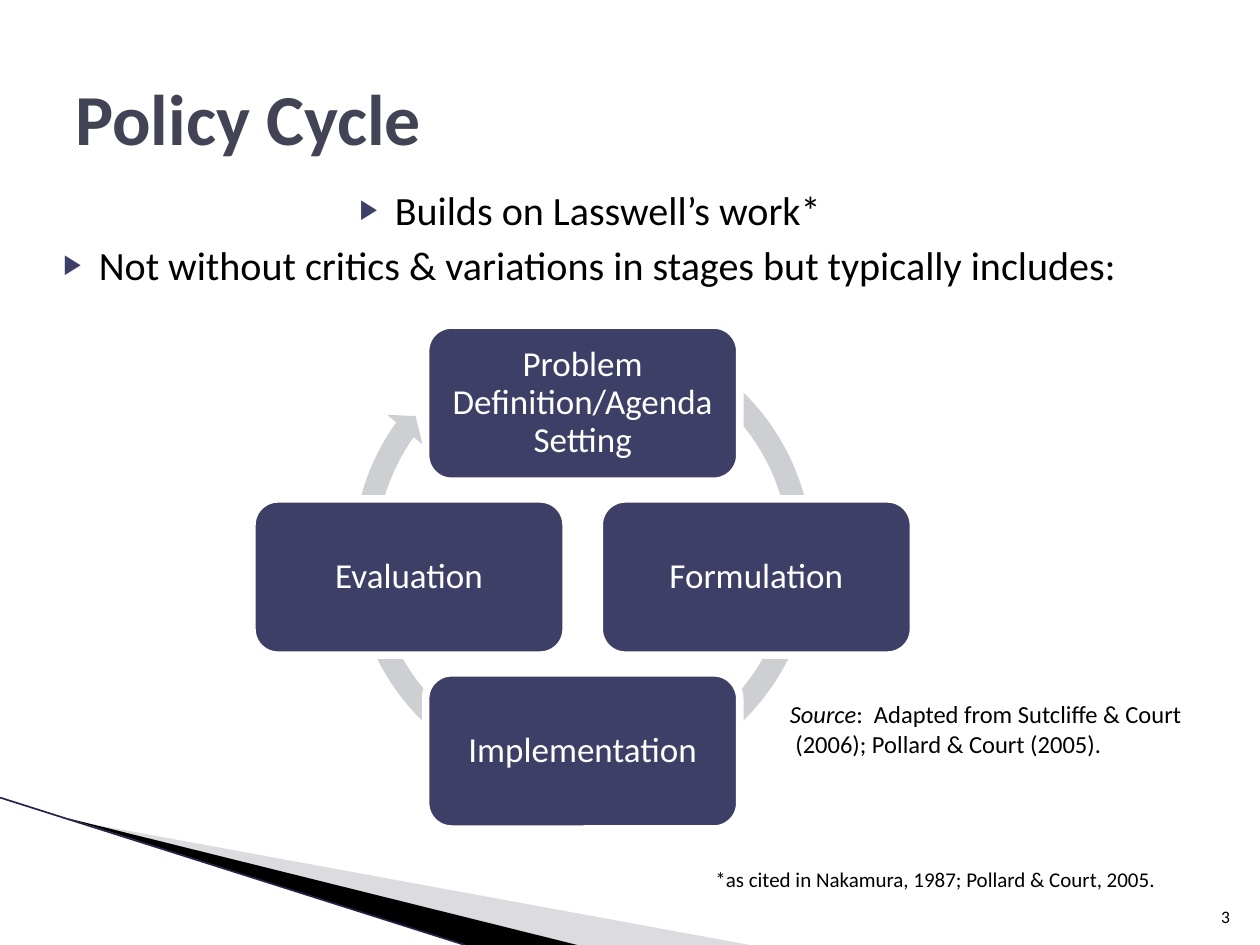
from lxml.etree import SubElement
from pptx import Presentation
from pptx.dml.color import RGBColor
from pptx.enum.shapes import MSO_CONNECTOR, MSO_SHAPE
from pptx.enum.text import MSO_ANCHOR, PP_ALIGN
from pptx.oxml.ns import qn
from pptx.util import Inches, Pt

WIDE, HIGH = 10, 7.5
FONT = "Calibri"
INK = {"navy": "3E3F67", "title": "424456", "ring": "CECFD3", "mist": "A6A6B2",
       "edge": "25254A", "black": "000000", "white": "FFFFFF"}
STAGES = [("Problem Definition/Agenda Setting", 1, 0), ("Formulation", 2, 1),
          ("Implementation", 1, 2), ("Evaluation", 0, 1)]


def share(left, top, wide, high):
    """Turn inches into shares of the slide's size."""
    return left / WIDE, top / HIGH, wide / WIDE, high / HIGH


def place(box):
    """Turn shares of the slide into lengths."""
    left, top, wide, high = box
    return (Inches(left * WIDE), Inches(top * HIGH),
            Inches(wide * WIDE), Inches(high * HIGH))


def tint(name):
    return RGBColor.from_string(INK[name])


def style(font, size, color="black", bold=False, italic=False):
    font.name, font.size = FONT, Pt(size)
    font.bold, font.italic = bold, italic
    font.color.rgb = tint(color)


def paint(shape, color):
    shape.shadow.inherit = False
    shape.fill.solid()
    shape.fill.fore_color.rgb = tint(color)
    shape.line.fill.background()


def add_text(slide, box, text, size, color="black", bold=False,
             align=PP_ALIGN.LEFT, anchor=MSO_ANCHOR.TOP):
    frame = slide.shapes.add_textbox(*place(box)).text_frame
    frame.word_wrap = True
    frame.vertical_anchor = anchor
    frame.text = text
    for para in frame.paragraphs:
        para.alignment = align
        for run in para.runs:
            style(run.font, size, color, bold)
    return frame


def add_bullet(para):
    props = para._p.get_or_add_pPr()
    props.set("marL", str(Inches(0.4)))
    props.set("indent", str(-Inches(0.28)))
    hue = SubElement(props, qn("a:buClr"))
    SubElement(hue, qn("a:srgbClr"), val=INK["navy"])
    SubElement(props, qn("a:buSzPct"), val="68000")
    SubElement(props, qn("a:buFont"), typeface="Arial")
    SubElement(props, qn("a:buChar"), char="▶")


def add_wedge(slide, points, color, alpha=None):
    start, *rest = [(Inches(x), Inches(y)) for x, y in points]
    build = slide.shapes.build_freeform(*start, scale=1.0)
    build.add_line_segments(rest, close=True)
    shape = build.convert_to_shape()
    paint(shape, color)
    if alpha:
        hue = shape._element.spPr.find(qn("a:solidFill"))[0]
        SubElement(hue, qn("a:alpha"), val=str(alpha * 1000))


def add_sweep(slide, box):
    """Draw the corner wedges and the thin line above them."""
    left, top, wide, high = box

    def spot(col, row):
        return (left + col * wide) * WIDE, (top + row * high) * HIGH

    add_wedge(slide, [spot(0.09, 0.15), spot(1, 1), spot(0.77, 1)], "mist", 40)
    add_wedge(slide, [spot(0.09, 0.14), spot(0.77, 1), spot(0.62, 1)], "black")
    ends = [Inches(n) for n in spot(0, 0) + spot(0.62, 1)]
    line = slide.shapes.add_connector(MSO_CONNECTOR.STRAIGHT, *ends)
    line.line.color.rgb = tint("edge")
    line.line.width = Pt(0.95)
    SubElement(line._element.spPr, qn("a:effectLst"))


def add_points(slide, box, lines):
    frame = add_text(slide, box, "\n".join(lines), 22.9, align=PP_ALIGN.CENTER)
    for para in frame.paragraphs:
        add_bullet(para)
    for para in frame.paragraphs[1:]:
        para.space_before = Pt(4)


def add_stage(slide, box, text):
    shape = slide.shapes.add_shape(MSO_SHAPE.ROUNDED_RECTANGLE, *place(box))
    paint(shape, "navy")
    shape.line.color.rgb = tint("white")
    shape.line.width = Pt(4.33)
    frame = shape.text_frame
    frame.word_wrap = True
    frame.vertical_anchor = MSO_ANCHOR.MIDDLE
    frame.margin_left = frame.margin_right = Inches(0.08)
    frame.margin_top = frame.margin_bottom = Inches(0.08)
    frame.text = text
    para = frame.paragraphs[0]
    para.alignment = PP_ALIGN.CENTER
    para.line_spacing = 0.9
    style(para.runs[0].font, 20, "white")


def add_cycle(slide, box):
    """Set four stages on a three by three grid over a ring arrow."""
    left, top, wide, high = box
    node_w, node_h = wide * 0.475, high * 0.31
    step_x, step_y = (wide - node_w) / 2, (high - node_h) / 2
    ring_w = wide * 0.73
    ring_h = ring_w * WIDE / HIGH
    ring = slide.shapes.add_shape(MSO_SHAPE.CIRCULAR_ARROW, *place(
        (left + (wide - ring_w) / 2, top - high * 0.02, ring_w, ring_h)))
    for i, value in enumerate([0.047, 2.729, 129.286, 179.649, 0.048]):
        ring.adjustments[i] = value
    paint(ring, "ring")
    for text, col, row in STAGES:
        spot = (left + col * step_x, top + row * step_y, node_w, node_h)
        add_stage(slide, spot, text)


def add_source(slide, box):
    frame = add_text(slide, box, "Source", 14)
    para = frame.paragraphs[0]
    para.runs[0].font.italic = True
    for i, text in enumerate([":  Adapted from Sutcliffe & Court",
                              " (2006); Pollard & Court (2005)."]):
        if i:
            para.add_line_break()
        run = para.add_run()
        run.text = text
        style(run.font, 14)


def main():
    deck = Presentation()
    deck.slide_width, deck.slide_height = Inches(WIDE), Inches(HIGH)
    slide = deck.slides.add_slide(deck.slide_layouts[6])
    add_sweep(slide, share(0, 6.33, 5.95, 1.17))
    add_text(slide, share(9.46, 7.01, 0.4, 0.4), "3", 10,
             align=PP_ALIGN.RIGHT, anchor=MSO_ANCHOR.BOTTOM)
    add_text(slide, share(0.5, 0.3, 9, 1.25), "Policy Cycle", 41, "title",
             bold=True, anchor=MSO_ANCHOR.MIDDLE)
    add_points(slide, share(0, 1.42, 9.25, 1.08), [
        "Builds on Lasswell’s work*",
        "Not without critics & variations in stages but typically includes:"])
    add_source(slide, share(6.17, 5.5, 3.33, 0.57))
    add_text(slide, share(5.58, 6.83, 3.83, 0.3),
             "*as cited in Nakamura, 1987; Pollard & Court, 2005.", 12)
    add_cycle(slide, share(2, 2.58, 5.25, 4))
    deck.save("out.pptx")


if __name__ == "__main__":
    main()
